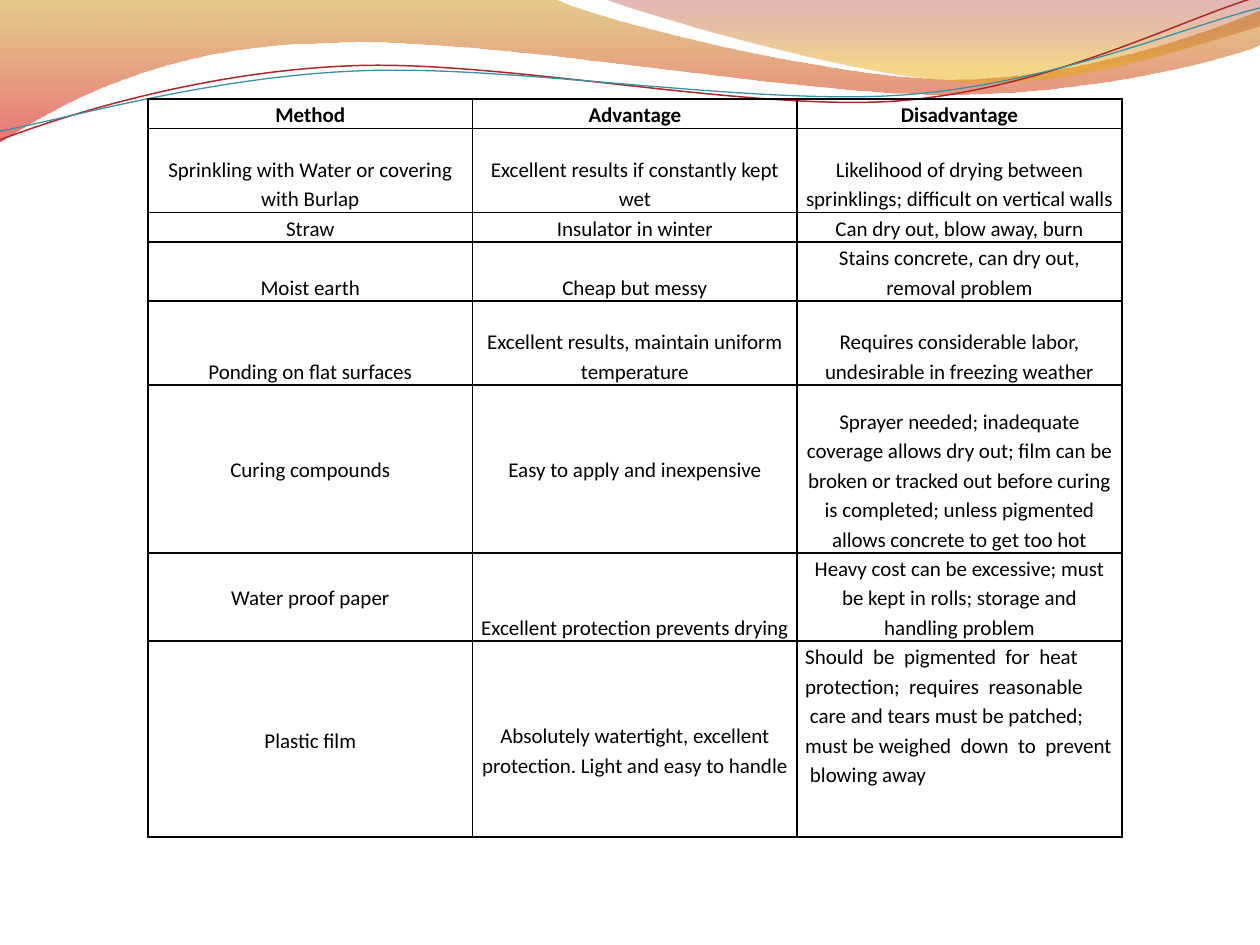
import dataclasses
import math

import lxml.etree
import pptx
import pptx.dml.color
import pptx.enum.text
import pptx.oxml.ns
import pptx.util

SCALE = 914400 / 126
ALIGN = pptx.enum.text.PP_ALIGN
ANCHOR = pptx.enum.text.MSO_ANCHOR
SIDES = ("a:lnL", "a:lnR", "a:lnT", "a:lnB")
GAP = " " + chr(160)


@dataclasses.dataclass(frozen=True)
class Theme:
    font: str = "Calibri"
    size: int = 12
    ink: str = "000000"
    rule: float = 1
    red: str = "AC2829"
    blue: str = "3891A7"
    warm: tuple = ((0, "C38B00", 45), (1, "D60305", 55))
    rose: tuple = ((0, "A11112", 30), (0.8, "E9A600", 45))


THEME = Theme()
TILT = 357.3

BACK = [(0, 0), (554, -1), (600, 21, 837, 79, 955, 79), (1075, 79, 1207, 33, 1260, 11),
        (1261, 45), (1239, 55, 1096, 96, 940, 94), (784, 94, 481, 35, 324, 43),
        (163, 45, 58, 105, -1, 142), (0, 0)]
FRONT = [(604, -1), (641, 14, 859, 78, 969, 82), (1079, 87, 1211, 40, 1260, 26),
         (1260, 0), (604, -1)]
UPPER = [(0, 140), (60, 117, 199, 72, 349, 66), (498, 59, 747, 112, 898, 101),
         (1050, 89, 1182, 19, 1257, -3)]
LOWER = [(0, 131), (59, 121, 207, 77, 357, 71), (508, 64, 752, 106, 903, 95),
         (1053, 84, 1186, 26, 1260, 8)]

UNIT = 28
ROWS = [
    (1, "bbb", "Method", "Advantage", "Disadvantage"),
    (3, "bbb", "Sprinkling with Water or covering with Burlap",
     "Excellent results if constantly kept wet",
     "Likelihood of drying between sprinklings; difficult on vertical walls"),
    (1, "bbb", "Straw", "Insulator in winter", "Can dry out, blow away, burn"),
    (2, "bbb", "Moist earth", "Cheap but messy",
     "Stains concrete, can dry out, removal problem"),
    (3, "bbb", "Ponding on flat surfaces",
     "Excellent results, maintain uniform temperature",
     "Requires considerable labor, undesirable in freezing weather"),
    (6, "mmb", "Curing compounds", "Easy to apply and inexpensive",
     "Sprayer needed; inadequate coverage allows dry out; film can be broken or tracked "
     "out before curing is completed; unless pigmented allows concrete to get too hot"),
    (3, "mbb", "Water proof paper", "Excellent protection prevents drying",
     "Heavy cost can be excessive; must be kept in rolls; storage and handling problem"),
    (7, "mbt", "Plastic film",
     "Absolutely watertight, excellent protection. Light and easy to handle",
     "Should  be  pigmented  for  heat\n"
     "protection;  requires  reasonable  care and tears must be patched; "
     "must be weighed  down  to  prevent  blowing away"),
]


def px(num):
    return pptx.util.Emu(round(num * SCALE))


def rgb(code):
    return pptx.dml.color.RGBColor.from_string(code)


def add(node, tag, **attrs):
    return lxml.etree.SubElement(node, pptx.oxml.ns.qn(tag), attrs)


def turn(part, mid, angle):
    cos, sin = math.cos(math.radians(angle)), math.sin(math.radians(angle))
    spots = [(x - mid[0], y - mid[1]) for x, y in zip(part[::2], part[1::2])]
    return [(px(mid[0] + x * cos - y * sin), px(mid[1] + x * sin + y * cos))
            for x, y in spots]


def draw(slide, box, route, close, angle=0):
    left, top, width, height = box
    mid = (width / 2, height / 2)
    parts = [[(px(left) + x, px(top) + y) for x, y in turn(part, mid, -angle)]
             for part in route]
    ends = [part[-1] for part in parts]
    pen = slide.shapes.build_freeform(*ends[0], scale=1.0)
    pen.add_line_segments(ends[1:], close=close)
    shape = pen.convert_to_shape()
    lines = list(shape._element.spPr.iter(pptx.oxml.ns.qn("a:lnTo")))
    for line, part in zip(lines, parts[1:]):
        if len(part) == 3:
            line.tag = pptx.oxml.ns.qn("a:cubicBezTo")
            line.remove(line[0])
            for x, y in part:
                add(line, "a:pt", x=str(x - shape.left), y=str(y - shape.top))
    shape.rotation = angle
    shape.shadow.inherit = False
    return shape


def add_wave(slide, box, route, stops):
    shape = draw(slide, box, route, True)
    shape.line.fill.background()
    shape.fill.gradient()
    shape.fill.gradient_angle = 270
    for stop, (place, code, alpha) in zip(shape.fill.gradient_stops, stops):
        stop.position = place
        stop.color.rgb = rgb(code)
    tag = pptx.oxml.ns.qn("a:srgbClr")
    for node, (_, _, alpha) in zip(shape._element.spPr.iter(tag), stops):
        add(node, "a:alpha", val=str(alpha * 1000))


def add_curve(slide, box, route, code, width):
    shape = draw(slide, box, route, False, TILT)
    shape.fill.background()
    shape.line.color.rgb = rgb(code)
    shape.line.width = pptx.util.Pt(width)


def add_header(slide, box):
    add_wave(slide, box, BACK, THEME.warm)
    add_wave(slide, box, FRONT, THEME.rose)
    add_curve(slide, box, UPPER, THEME.red, 0.85)
    add_curve(slide, box, LOWER, THEME.blue, 0.75)


def fill_cell(cell, text, anchor, bold):
    props = cell._tc.get_or_add_tcPr()
    for side in SIDES:
        line = add(props, side, w=str(pptx.util.Pt(THEME.rule)))
        add(add(line, "a:solidFill"), "a:srgbClr", val=THEME.ink)
    cell.fill.background()
    cell.margin_left = cell.margin_right = px(8)
    cell.margin_top = cell.margin_bottom = 0
    cell.vertical_anchor = {"t": ANCHOR.TOP, "m": ANCHOR.MIDDLE, "b": ANCHOR.BOTTOM}[anchor]
    cell.text_frame.text = text.replace("  ", GAP)
    for para in cell.text_frame.paragraphs:
        para.alignment = ALIGN.LEFT if anchor == "t" else ALIGN.CENTER
        para.line_spacing = 1.15
        para.font.name = THEME.font
        para.font.size = pptx.util.Pt(THEME.size)
        para.font.bold = bold
        para.font.color.rgb = rgb(THEME.ink)


def add_grid(slide, box):
    left, top, width = box
    high = UNIT * sum(row[0] for row in ROWS)
    frame = slide.shapes.add_table(len(ROWS), 3, px(left), px(top), px(width), px(high))
    table = frame.table
    table.first_row = table.horz_banding = False
    for col in table.columns:
        col.width = px(width / 3)
    for i, (units, anchors, *texts) in enumerate(ROWS):
        table.rows[i].height = px(units * UNIT)
        for j, text in enumerate(texts):
            fill_cell(table.cell(i, j), text, anchors[j], i == 0)
    table.cell(len(ROWS) - 1, 1).margin_bottom = px(58)


def main():
    deck = pptx.Presentation()
    deck.slide_width, deck.slide_height = px(1260), px(945)
    slide = deck.slides.add_slide(deck.slide_layouts[6])
    add_header(slide, (0, 0, 1260, 144))
    add_grid(slide, (148, 99, 974))
    deck.save("out.pptx")


if __name__ == "__main__":
    main()
